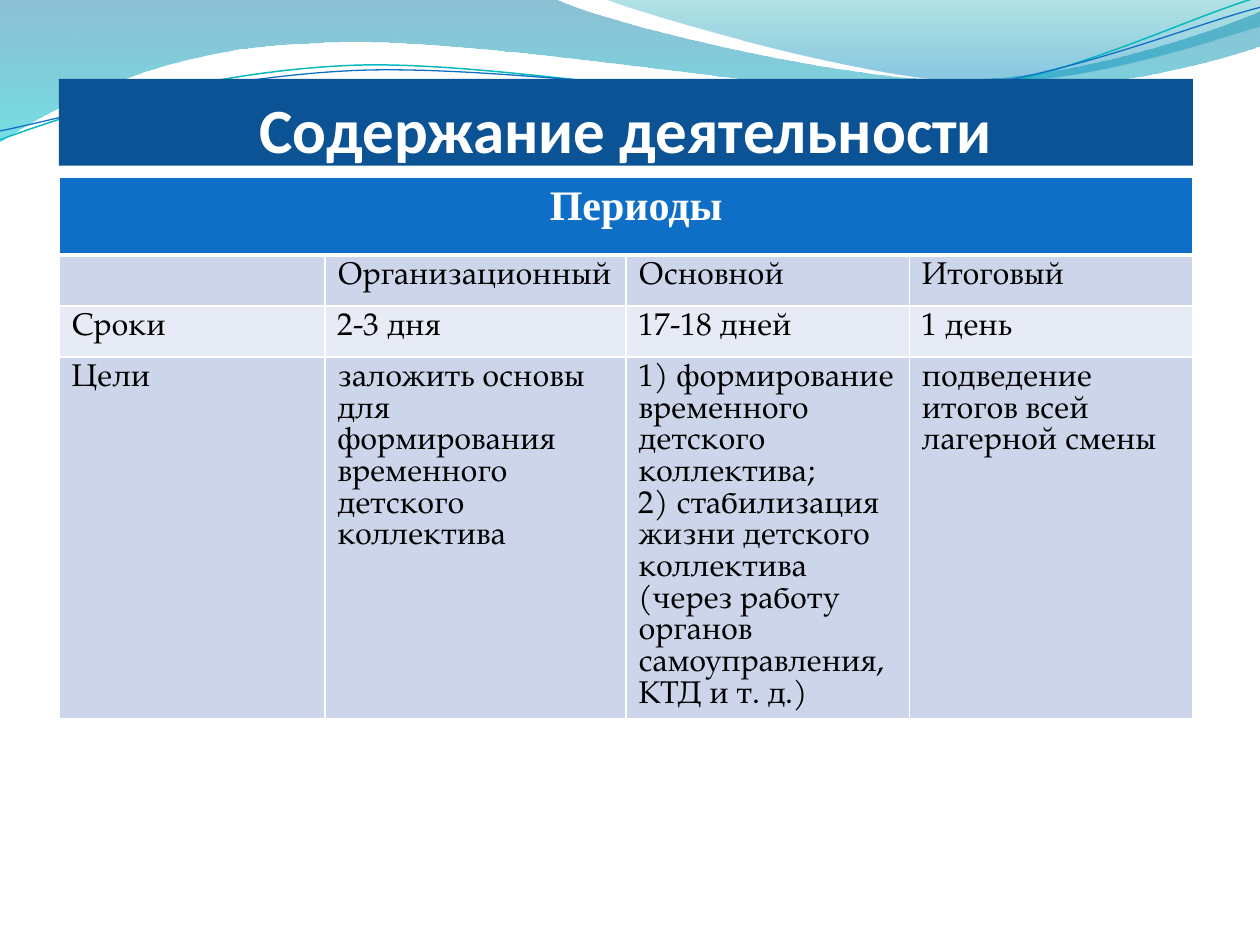
from lxml import etree
from pptx import Presentation
from pptx.dml.color import RGBColor
from pptx.enum.shapes import MSO_SHAPE
from pptx.enum.text import MSO_ANCHOR, PP_ALIGN
from pptx.oxml import parse_xml
from pptx.oxml.ns import nsdecls, qn
from pptx.util import Cm, Pt

# Outlines in cm: a pair is a point, six numbers are a Bézier segment.
WAVES = [
    ([(0, 0), (11.18, -0.03),
      (12.09, 0.43, 16.87, 1.6, 19.25, 1.6),
      (21.67, 1.6, 24.33, 0.66, 25.4, 0.23), (25.43, 0.91),
      (24.97, 1.12, 22.1, 1.93, 18.95, 1.91),
      (15.8, 1.91, 9.7, 0.71, 6.53, 0.86),
      (3.28, 0.91, 1.17, 2.11, -0.03, 2.87), (0, 0)],
     [(0, "0074A1", 45), (1, "00C6CF", 55)]),
    ([(12.17, -0.03),
      (12.93, 0.28, 17.32, 1.57, 19.53, 1.65),
      (21.74, 1.75, 24.41, 0.81, 25.4, 0.53), (25.4, 0), (12.17, -0.03)],
     [(0, "00A1A9", 30), (0.8, "008BBF", 45)]),
]
STRANDS = [
    ([(0, 2.82),
      (1.22, 2.36, 4.01, 1.45, 7.04, 1.32),
      (10.03, 1.19, 15.06, 2.26, 18.11, 2.03),
      (21.16, 1.8, 23.83, 0.38, 25.35, -0.05)], "0AB8BF", 0.85),
    ([(0, 2.64),
      (1.19, 2.41, 4.17, 1.55, 7.19, 1.42),
      (10.24, 1.3, 15.16, 2.13, 18.21, 1.91),
      (21.23, 1.7, 23.9, 0.53, 25.4, 0.15)], "0F6FC6", 0.75),
]

COLUMNS = [5.36, 6.07, 5.71, 5.72]
ROWS = [1.57, 1.03, 1.03, 7.27]
ROW_FILLS = ["0F6FC6", "CCD5EA", "E7EBF5", "CCD5EA"]
PERIODS = [
    ["", "Организационный", "Основной", "Итоговый"],
    ["Сроки", "2-3 дня", "17-18 дней", "1 день"],
    ["Цели",
     "заложить основы для формирования временного детского коллектива",
     "1) формирование временного детского коллектива;\n"
     "2) стабилизация жизни детского коллектива "
     "(через работу органов самоуправления, КТД и т. д.)",
     "подведение итогов всей лагерной смены"],
]


def rgb(value):
    return RGBColor.from_string(value)


def set_font(p, name, size, color, bold=False):
    p.font.name = name
    p.font.size = Pt(size)
    p.font.bold = bold
    p.font.color.rgb = rgb(color)


def add_outline(s, left, top, outline, close):
    """Draw the outline through all its points, then bend the Bézier parts."""
    points = [(Cm(left + part[i]), Cm(top + part[i + 1]))
              for part in outline for i in range(0, len(part), 2)]
    builder = s.shapes.build_freeform(*points[0])
    builder.add_line_segments(points[1:], close=close)
    sp = builder.convert_to_shape()
    sp.shadow.inherit = False
    lines = iter(list(sp.element.spPr.iter(qn("a:lnTo"))))
    for part in outline[1:]:
        segment = next(lines)
        if len(part) == 6:
            segment.tag = qn("a:cubicBezTo")
            for _ in range(2):
                extra = next(lines)
                segment.append(extra[0])
                extra.getparent().remove(extra)
    return sp


def fill_gradient(sp, stops):
    """Fill from top to bottom with (position, colour, opacity %) stops."""
    sp.fill.gradient()
    sp.fill.gradient_angle = 270
    for stop, (position, color, _) in zip(sp.fill.gradient_stops, stops):
        stop.position = position
        stop.color.rgb = rgb(color)
    colors = sp.element.spPr.iter(qn("a:srgbClr"))
    for clr, (_, _, opacity) in zip(list(colors), stops):
        etree.SubElement(clr, qn("a:alpha"), val=str(opacity * 1000))


def add_waves(s, left, top):
    for outline, stops in WAVES:
        sp = add_outline(s, left, top, outline, True)
        fill_gradient(sp, stops)
        sp.line.fill.background()
    for outline, color, width in STRANDS:
        sp = add_outline(s, left, top, outline, False)
        sp.fill.background()
        sp.line.color.rgb = rgb(color)
        sp.line.width = Pt(width)


def add_title(s, left, top, width, height):
    sp = s.shapes.add_shape(MSO_SHAPE.RECTANGLE, Cm(left), Cm(top),
                            Cm(width), Cm(height))
    sp.shadow.inherit = False
    sp.fill.solid()
    sp.fill.fore_color.rgb = rgb("0B5394")
    sp.line.fill.background()
    tf = sp.text_frame
    tf.word_wrap = True
    tf.vertical_anchor = MSO_ANCHOR.BOTTOM
    tf.margin_left = tf.margin_right = tf.margin_bottom = 0
    tf.margin_top = Cm(0.13)
    p = tf.paragraphs[0]
    p.text = "Содержание деятельности"
    p.alignment = PP_ALIGN.CENTER
    set_font(p, "Calibri", 36, "FFFFFF", True)


def style_cell(cell, fill, bottom_border):
    cell.fill.solid()
    cell.fill.fore_color.rgb = rgb(fill)
    borders = {"lnL": 1, "lnR": 1, "lnT": 1, "lnB": bottom_border}
    tcPr = cell._tc.get_or_add_tcPr()
    for i, (side, width) in enumerate(borders.items()):
        tcPr.insert(i, parse_xml(
            f'<a:{side} {nsdecls("a")} w="{Pt(width)}"><a:solidFill>'
            f'<a:srgbClr val="FFFFFF"/></a:solidFill></a:{side}>'))


def add_periods_table(s, left, top):
    table = s.shapes.add_table(len(ROWS), len(COLUMNS), Cm(left), Cm(top),
                               Cm(sum(COLUMNS)), Cm(sum(ROWS))).table
    for column, width in zip(table.columns, COLUMNS):
        column.width = Cm(width)
    for i, (row, height) in enumerate(zip(table.rows, ROWS)):
        row.height = Cm(height)
        for cell in row.cells:
            style_cell(cell, ROW_FILLS[i], 3 if i == 0 else 1)

    header = table.cell(0, 0)
    header.merge(table.cell(0, len(COLUMNS) - 1))
    header.margin_left = Cm(0.66)
    p = header.text_frame.paragraphs[0]
    p.text = "Периоды"
    p.alignment = PP_ALIGN.CENTER
    set_font(p, "Times New Roman", 24, "FFFFFF", True)

    for i, texts in enumerate(PERIODS, start=1):
        for j, text in enumerate(texts):
            tf = table.cell(i, j).text_frame
            tf.text = text
            for p in tf.paragraphs:
                set_font(p, "TeX Gyre Pagella", 18, "000000")


def main():
    prs = Presentation()
    prs.slide_width = Cm(25.4)
    prs.slide_height = Cm(19.05)
    s = prs.slides.add_slide(prs.slide_layouts[6])
    add_waves(s, 0, 0)
    add_title(s, 1.19, 1.59, 22.86, 1.75)
    add_periods_table(s, 1.19, 3.57)
    prs.save("out.pptx")


if __name__ == "__main__":
    main()
